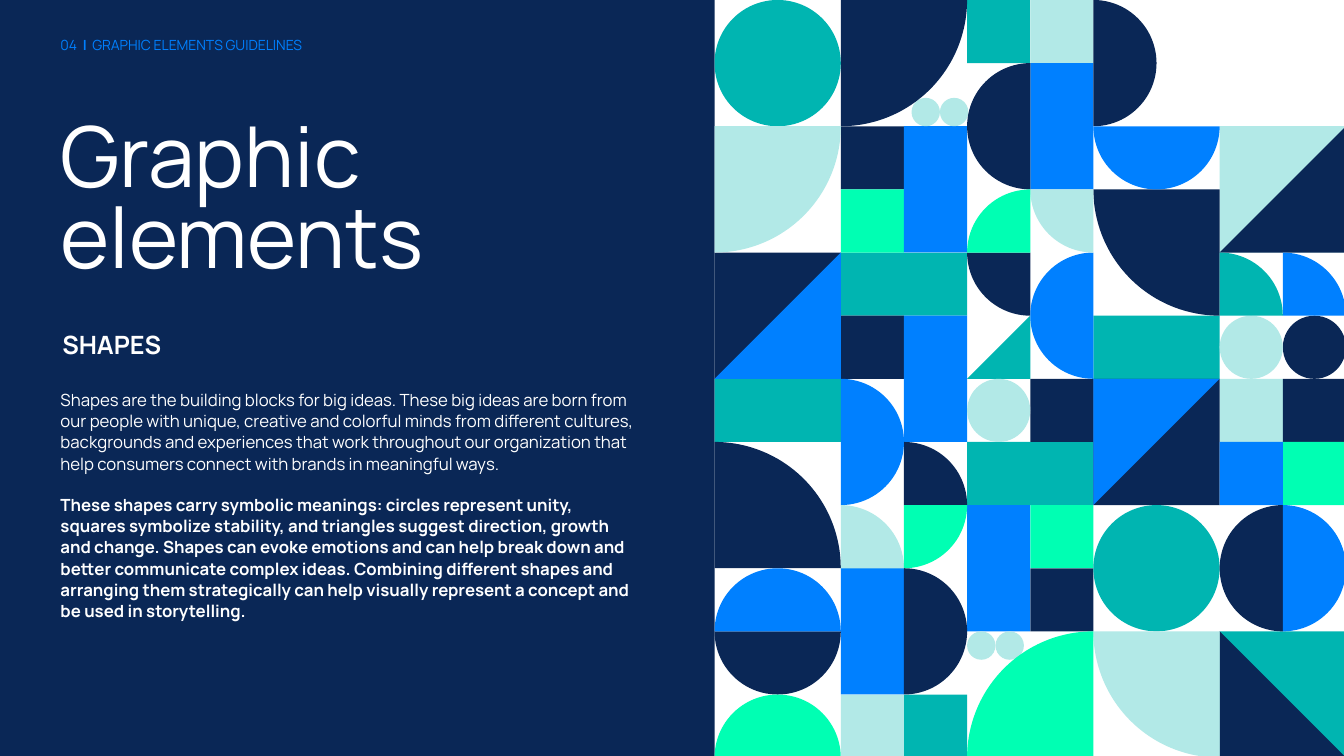
from math import cos, radians, sin, sqrt

from pptx import Presentation
from pptx.dml.color import RGBColor
from pptx.enum import shapes, text
from pptx.oxml import ns, xmlchemy as xml
from pptx.util import Pt

NAVY = RGBColor(0x0A, 0x27, 0x56)
BLUE = RGBColor(0x00, 0x80, 0xFF)
TEAL = RGBColor(0x00, 0xB5, 0xB1)
PALE = RGBColor(0xB2, 0xE9, 0xE7)
MINT = RGBColor(0x00, 0xFF, 0xB3)
WHITE = RGBColor(0xFF, 0xFF, 0xFF)
FONT = "Manrope"

# Text
TITLE = "Graphic elements"
SUBTITLE = "SHAPES"
HEADER = [("04  ", False), ("I  ", True), ("GRAPHIC ELEMENTS GUIDELINES", False)]
BODY = [
    ("Shapes are the building blocks for big ideas. These big ideas are born from our "
     "people with unique, creative and colorful minds from different cultures, "
     "backgrounds and experiences that work throughout our organization that help "
     "consumers connect with brands in meaningful ways.", False),
    ("These shapes carry symbolic meanings: circles represent unity, squares symbolize "
     "stability, and triangles suggest direction, growth and change. Shapes can evoke "
     "emotions and can help break down and better communicate complex ideas. Combining "
     "different shapes and arranging them strategically can help visually represent a "
     "concept and be used in storytelling.", True),
]

# Mosaic, in grid units: column, row, width, height
RECTS = {
    TEAL: [(4, 0, 1, 1), (2, 4, 2, 1), (6, 5, 2, 1), (0, 6, 2, 1), (4, 7, 2, 1),
           (8, 10, 2, 2), (3, 11, 1, 1)],
    PALE: [(5, 0, 1, 1), (8, 2, 2, 2), (8, 6, 1, 1), (2, 11, 1, 1)],
    NAVY: [(2, 2, 1, 1), (0, 4, 2, 2), (2, 5, 1, 1), (5, 6, 1, 1), (6, 6, 2, 2),
           (9, 6, 1, 1), (5, 9, 1, 1)],
    MINT: [(2, 3, 1, 1), (9, 7, 1, 1), (5, 8, 1, 1)],
    BLUE: [(5, 1, 1, 2), (3, 2, 1, 2), (3, 5, 1, 2), (8, 7, 1, 1), (4, 8, 1, 2),
           (2, 9, 1, 2)],
}
# Column, row, size, rotation
TRIANGLES = {
    NAVY: [(8, 2, 2, 270), (8, 10, 2, 0)],
    BLUE: [(0, 4, 2, 270), (6, 6, 2, 90)],
    TEAL: [(4, 5, 1, 270)],
}
# Column, row, diameter
DOT = 0.45
DISCS = {
    TEAL: [(0, 0, 2), (6, 8, 2)],
    NAVY: [(9, 5, 1)],
    PALE: [(8, 5, 1), (4, 6, 1), (3.12, 1.55, DOT), (3.57, 1.55, DOT),
           (4, 10, DOT), (4 + DOT, 10, DOT)],
}
# Centre column, centre row, radius, start angle (clockwise from right), sweep
SECTORS = {
    NAVY: [(2, 0, 2, 0, 90), (8, 3, 2, 90, 90), (5, 4, 1, 90, 90), (0, 9, 2, 270, 90),
           (3, 8, 1, 270, 90), (6, 1, 1, 270, 180), (5, 2, 1, 90, 180),
           (9, 9, 1, 90, 180), (1, 10, 1, 0, 180), (3, 10, 1, 270, 180)],
    BLUE: [(9, 5, 1, 270, 90), (7, 2, 1, 0, 180), (6, 5, 1, 90, 180),
           (2, 7, 1, 270, 180), (9, 9, 1, 270, 180), (1, 10, 1, 180, 180)],
    PALE: [(0, 2, 2, 0, 90), (6, 3, 1, 90, 90), (2, 9, 1, 270, 90), (8, 10, 2, 90, 90)],
    MINT: [(5, 4, 1, 180, 90), (3, 8, 1, 0, 90), (6, 12, 2, 180, 90),
           (1, 12, 1, 180, 180)],
    TEAL: [(8, 5, 1, 270, 90)],
}
LEFT, UNIT = 510.4, 45.1

prs = Presentation()
prs.slide_width, prs.slide_height = Pt(960), Pt(540)
s = prs.slides.add_slide(prs.slide_layouts[5])
s.background.fill.solid()
s.background.fill.fore_color.rgb = NAVY


def paint(sp, color):
    sp.shadow.inherit = False
    sp.fill.solid()
    sp.fill.fore_color.rgb = color
    sp.line.fill.background()


def add_tile(kind, col, row, w, h, color, rotation=0):
    sp = s.shapes.add_shape(kind, Pt(LEFT + col * UNIT), Pt(row * UNIT),
                            Pt(w * UNIT), Pt(h * UNIT))
    sp.rotation = rotation
    paint(sp, color)


def add_sector(col, row, radius, start, sweep, color):
    cx, cy, r = LEFT + col * UNIT, row * UNIT, radius * UNIT

    def polar(angle, reach):
        a = radians(angle)
        return Pt(cx + reach * cos(a)), Pt(cy + reach * sin(a))

    # Outline through the corners of the enclosing box, then round it with one arc
    corners = [polar(start + a, r * sqrt(2)) for a in range(45, sweep, 90)]
    outline = s.shapes.build_freeform(Pt(cx), Pt(cy))
    outline.add_line_segments([polar(start, r), *corners, polar(start + sweep, r)])
    sp = outline.convert_to_shape()
    first, *rest = sp._element.findall(".//" + ns.qn("a:lnTo"))
    arc = xml.OxmlElement("a:arcTo")
    for name, value in (("wR", Pt(r)), ("hR", Pt(r)),
                        ("stAng", start * 60000), ("swAng", sweep * 60000)):
        arc.set(name, str(int(value)))
    first.addnext(arc)
    for line in rest:
        line.getparent().remove(line)
    paint(sp, color)


def set_frame(sp, inset_x=0, inset_y=0):
    tf = sp.text_frame
    tf.word_wrap = True
    tf.auto_size = text.MSO_AUTO_SIZE.NONE
    tf.vertical_anchor = text.MSO_ANCHOR.TOP
    tf.margin_left = tf.margin_right = Pt(inset_x)
    tf.margin_top = tf.margin_bottom = Pt(inset_y)
    return tf


def add_box(x, y, w, h, inset_x=0, inset_y=0):
    return set_frame(s.shapes.add_textbox(Pt(x), Pt(y), Pt(w), Pt(h)), inset_x, inset_y)


def style(p, size, color=WHITE, bold=None):
    p.alignment = text.PP_ALIGN.LEFT
    p.font.name, p.font.size, p.font.bold = FONT, Pt(size), bold
    p.font.color.rgb = color


# Title
title = s.shapes.title
title.left, title.top, title.width, title.height = Pt(43.2), Pt(87.8), Pt(348.5), Pt(123)
p = set_frame(title).paragraphs[0]
p.text = TITLE
p.line_spacing = 0.8
style(p, 60)

# Body
tf = add_box(43.2, 277.2, 411, 165.6)
for i, (words, bold) in enumerate(BODY):
    p = tf.add_paragraph() if i else tf.paragraphs[0]
    p.text = words
    p.line_spacing, p.space_after = 1.06, Pt(14)
    style(p, 12, bold=bold)

# Subtitle
p = add_box(37.4, 231.8, 170, 29, 7.2, 3.6).paragraphs[0]
p.text = SUBTITLE
style(p, 18, bold=True)

# Section header
p = add_box(39.6, 22.3, 228, 19.4, 3.6, 3.6).paragraphs[0]
for words, bold in HEADER:
    r = p.add_run()
    r.text, r.font.bold = words, bold
style(p, 10, BLUE)

# Mosaic
panel = s.shapes.add_shape(shapes.MSO_SHAPE.RECTANGLE, Pt(LEFT), 0, Pt(960 - LEFT), Pt(540))
paint(panel, WHITE)
for color, tiles in RECTS.items():
    for col, row, w, h in tiles:
        add_tile(shapes.MSO_SHAPE.RECTANGLE, col, row, w, h, color)
for color, tiles in TRIANGLES.items():
    for col, row, size, rotation in tiles:
        add_tile(shapes.MSO_SHAPE.RIGHT_TRIANGLE, col, row, size, size, color, rotation)
for color, tiles in DISCS.items():
    for col, row, size in tiles:
        add_tile(shapes.MSO_SHAPE.OVAL, col, row, size, size, color)
for color, tiles in SECTORS.items():
    for sector in tiles:
        add_sector(*sector, color)

prs.save("out.pptx")
